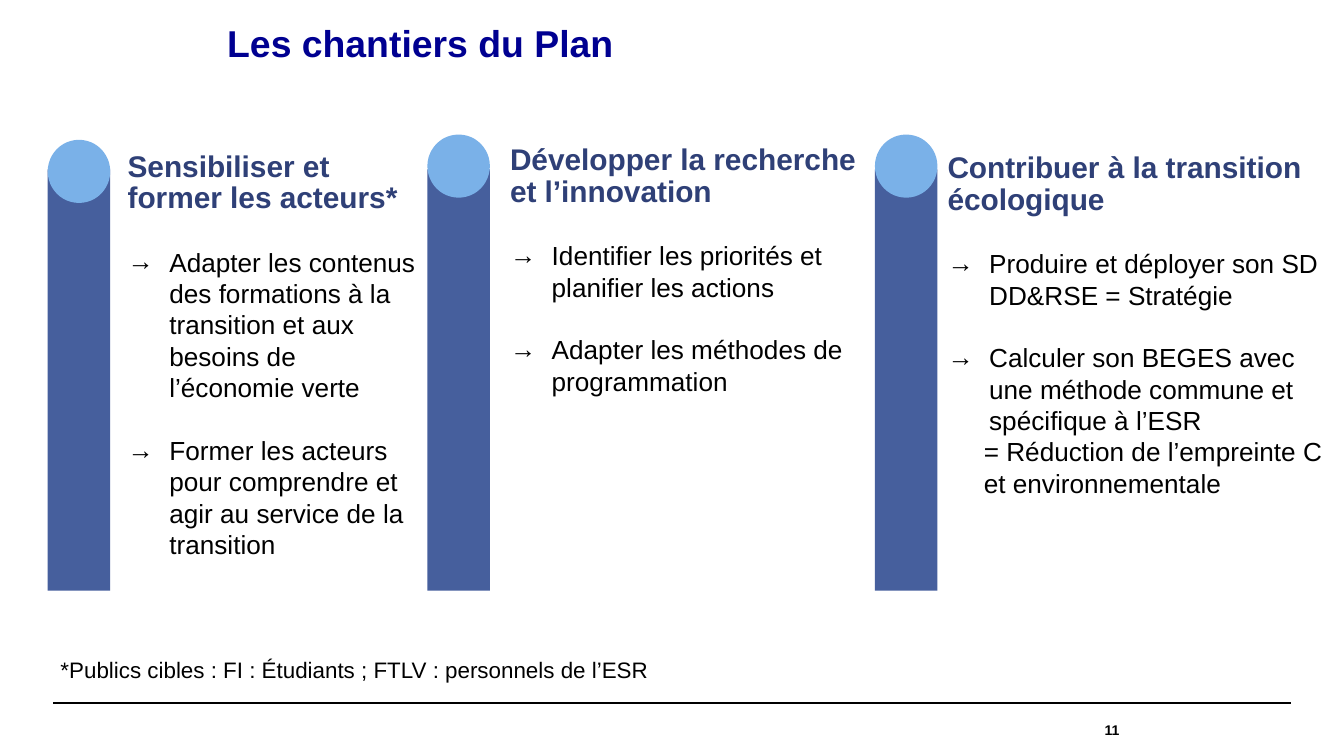
import pptx
import pptx.util
import pptx.dml.color
import pptx.enum.shapes
import pptx.enum.text
import pptx.oxml.ns
import lxml.etree

COLORS = {"title": "000091", "heading": "2F4077", "text": "000000",
          "pillar": "465F9D", "disc": "7AB1E8"}
LINE_HEIGHT = pptx.util.Pt(16.8)
INDENT = pptx.util.Inches(0.31)
CONTINUATION = pptx.util.Inches(0.27)
ALIGN = pptx.enum.text.PP_ALIGN
ANCHOR = pptx.enum.text.MSO_ANCHOR

deck = pptx.Presentation()
deck.slide_width = pptx.util.Inches(10)
deck.slide_height = deck.slide_width * 9 // 16
COLUMN = deck.slide_width / 100
ROW = deck.slide_height / 100
page = deck.slides.add_slide(deck.slide_layouts.get_by_name("Comparison"))


def place(shape, left, top, width, height):
    """Position a shape in hundredths of the slide's width and height."""
    shape.left, shape.width = int(left * COLUMN), int(width * COLUMN)
    shape.top, shape.height = int(top * ROW), int(height * ROW)
    if shape.has_text_frame:
        frame = shape.text_frame
        frame.word_wrap = True
        frame.auto_size = pptx.enum.text.MSO_AUTO_SIZE.NONE
        frame.vertical_anchor = ANCHOR.TOP
        frame.margin_left = frame.margin_right = 0
        frame.margin_top = frame.margin_bottom = 0


def write(para, text, size, color, bold=False, align=ALIGN.LEFT):
    para.alignment = align
    para.space_before = pptx.util.Pt(0)
    span = para.add_run()
    span.text = text
    span.font.name = "Arial"
    span.font.size = pptx.util.Pt(size)
    span.font.bold = bold
    span.font.color.rgb = pptx.dml.color.RGBColor.from_string(COLORS[color])


title = page.shapes.title
place(title, 16.9, 3.4, 31.9, 6.8)
title_para = title.text_frame.paragraphs[0]
title_para.line_spacing = 0.9
write(title_para, "Les chantiers du Plan", 20, "title", bold=True)

# Each pillar: bar left, disc top, text left, top, width and height, paragraphs.
# A paragraph is (kind, text, blank line after).
pillars = [
    (3.55, 18.5, 9.5, 20.1, 21.6, 55.1, [
        ("heading", "Sensibiliser et former les acteurs*", True),
        ("bullet", "Adapter les contenus des formations à la transition et aux "
                   "besoins de l’économie verte", True),
        ("bullet", "Former les acteurs pour comprendre et agir au service de la "
                   "transition", False)]),
    (31.8, 17.8, 37.95, 19.25, 25.9, 42.3, [
        ("heading", "Développer la recherche et l’innovation", True),
        ("bullet", "Identifier les priorités et planifier les actions", True),
        ("bullet", "Adapter les méthodes de programmation", False)]),
    (65.1, 17.8, 70.5, 20.3, 28.2, 50.7, [
        ("heading", "Contribuer à la transition écologique", True),
        ("bullet", "Produire et déployer son SD DD&RSE = Stratégie", True),
        ("bullet", "Calculer son BEGES avec une méthode commune et spécifique "
                   "à l’ESR", False),
        ("continuation", "= Réduction de l’empreinte C", False),
        ("continuation", "et environnementale", False)]),
]
indents = {"heading": (0, 0), "bullet": (INDENT, -INDENT),
           "continuation": (CONTINUATION, 0)}
SHAPES = pptx.enum.shapes.MSO_SHAPE

for number, pillar in enumerate(pillars, start=1):
    bar_left, disc_top, left, top, width, height, paragraphs = pillar
    for kind, color, shape_top, shape_height in (
            (SHAPES.RECTANGLE, "pillar", 22.4, 55.75),
            (SHAPES.OVAL, "disc", disc_top, 8.35)):
        shape = page.shapes.add_shape(kind, 0, 0, 0, 0)
        place(shape, bar_left, shape_top, 4.65, shape_height)
        shape.shadow.inherit = False
        shape.fill.solid()
        shape.fill.fore_color.rgb = pptx.dml.color.RGBColor.from_string(COLORS[color])
        shape.line.fill.background()

    body = page.placeholders[number]
    place(body, left, top, width, height)
    for index, (kind, text, gap) in enumerate(paragraphs):
        frame = body.text_frame
        para = frame.paragraphs[0] if index == 0 else frame.add_paragraph()
        properties = para._p.get_or_add_pPr()
        margin, first_line = indents[kind]
        properties.set("marL", str(margin))
        properties.set("indent", str(first_line))
        if kind == "bullet":
            bullet = lxml.etree.SubElement(properties, pptx.oxml.ns.qn("a:buChar"))
            bullet.set("char", "→")
        else:
            lxml.etree.SubElement(properties, pptx.oxml.ns.qn("a:buNone"))
        para.line_spacing = LINE_HEIGHT
        para.space_after = LINE_HEIGHT if gap else pptx.util.Pt(0)
        is_heading = kind == "heading"
        write(para, text, 16 if is_heading else 14,
              "heading" if is_heading else "text", bold=is_heading)

unused = page.placeholders[4].element
unused.getparent().remove(unused)

footnote = page.shapes.add_textbox(0, 0, 0, 0)
place(footnote, 4.5, 86.8, 90.5, 4.4)
write(footnote.text_frame.paragraphs[0],
      "*Publics cibles : FI : Étudiants ; FTLV : personnels de l’ESR",
      12, "text", align=ALIGN.JUSTIFY)

rule = page.shapes.add_connector(
    pptx.enum.shapes.MSO_CONNECTOR.STRAIGHT,
    int(3.95 * COLUMN), int(93 * ROW), int(96.05 * COLUMN), int(93 * ROW))
rule.line.color.rgb = pptx.dml.color.RGBColor.from_string(COLORS["text"])
rule.line.width = pptx.util.Pt(0.8)
lxml.etree.SubElement(rule.element.spPr, pptx.oxml.ns.qn("a:effectLst"))

page_number = page.shapes.add_textbox(0, 0, 0, 0)
place(page_number, 68.5, 93.1, 14.8, 6.9)
page_number.text_frame.vertical_anchor = ANCHOR.MIDDLE
write(page_number.text_frame.paragraphs[0], "11", 7.5, "text",
      bold=True, align=ALIGN.RIGHT)

deck.save("out.pptx")
